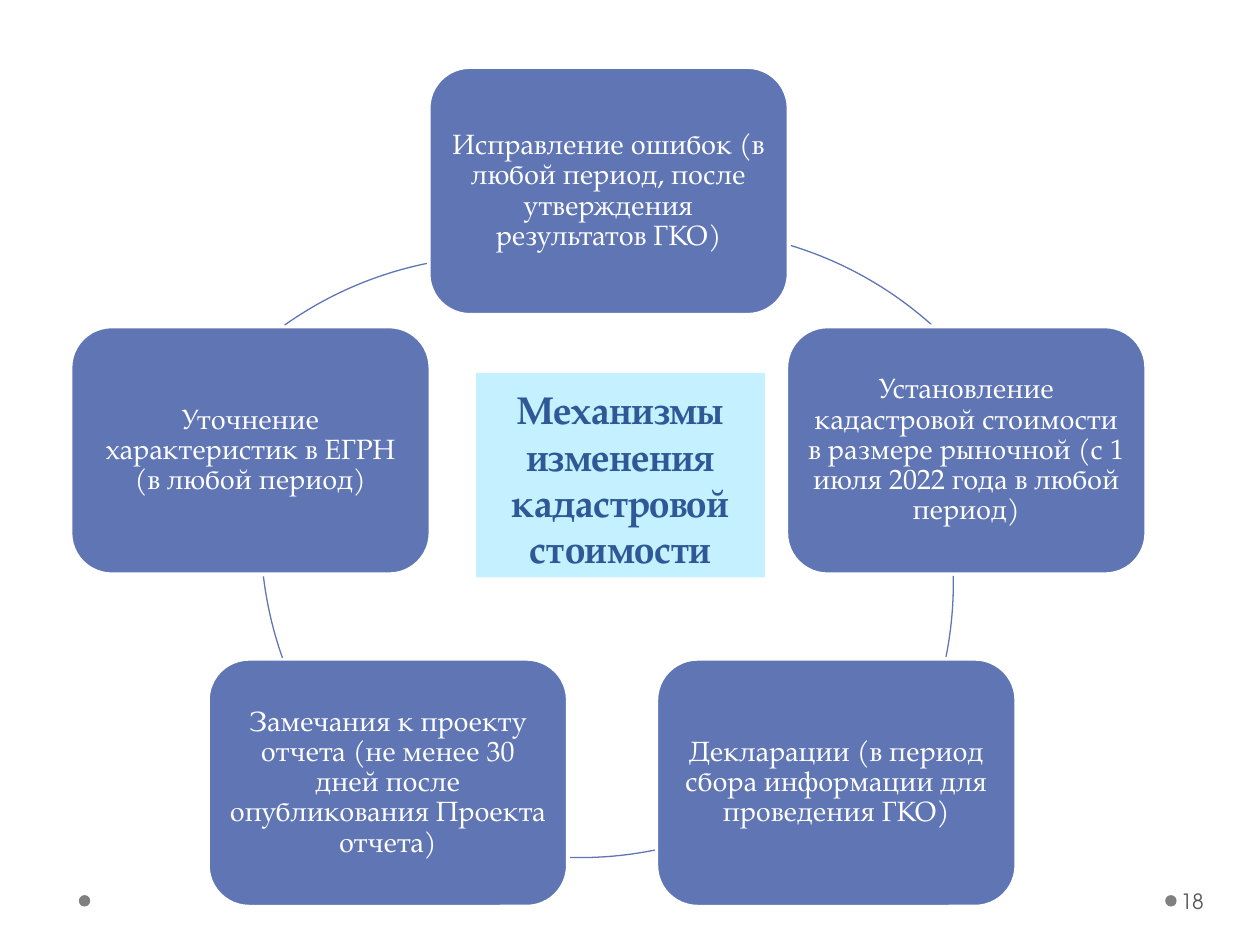
from pptx import Presentation
from pptx.dml.color import RGBColor
from pptx.enum.shapes import MSO_SHAPE as Shp
from pptx.enum.text import MSO_ANCHOR as Anc, PP_ALIGN as Al
from pptx.util import Cm, Pt

SERIF, SANS = "TeX Gyre Pagella", "TeX Gyre Adventor"
BLUE, WHITE, GREY = "6076B4", "FFFFFF", "808080"
CARD_W, CARD_H, RING = 7.26, 5.0, 15.16
CARDS = [
    (8.64, 1.35, "Исправление ошибок (в любой период, после утверждения результатов ГКО)"),
    (15.85, 6.58, "Установление кадастровой стоимости в размере рыночной "
                  "(с 1 июля 2022 года в любой период)"),
    (13.23, 13.28, "Декларации (в период сбора информации для проведения ГКО)"),
    (4.19, 13.28, "Замечания к проекту отчета (не менее 30 дней после "
                  "опубликования Проекта отчета)"),
    (1.42, 6.58, "Уточнение характеристик в ЕГРН (в любой период)"),
]
ARCS = [
    (6.15, 4.62, 287, 311.9),
    (4.06, 4.17, 358.95, 11.4),
    (4.11, 2.13, 78.5, 91.6),
    (5.26, 3.15, 160.5, 173.4),
    (2.54, 5.16, 234.7, 258.5),
]


def rgb(value):
    """Turn a hex string into a colour."""
    return RGBColor.from_string(value)


def set_all(obj, values):
    """Set each attribute named in a dict of format values."""
    for name, value in values.items():
        setattr(obj, name, value)


def add_shape(s, kind, x, y, w, h, fill=None, line=None, width=0.75):
    """Add a preset shape without shadow, sized in centimetres."""
    sp = s.shapes.add_shape(kind, Cm(x), Cm(y), Cm(w), Cm(h))
    sp.shadow.inherit = False
    for fmt, colour in ((sp.fill, fill), (sp.line.fill, line)):
        if colour:
            fmt.solid()
            fmt.fore_color.rgb = rgb(colour)
        else:
            fmt.background()
    if line:
        sp.line.width = Pt(width)
    return sp


def write(sp, text, colour, font, frame, para):
    """Write one formatted paragraph into a shape."""
    tf = sp.text_frame
    set_all(tf, {"word_wrap": True, **frame})
    p = tf.paragraphs[0]
    set_all(p, para)
    r = p.add_run()
    r.text = text
    set_all(r.font, font)
    r.font.color.rgb = rgb(colour)


def add_card(s, x, y, text):
    """Draw one rounded card of the cycle."""
    sp = add_shape(s, Shp.ROUNDED_RECTANGLE, x, y, CARD_W, CARD_H, BLUE, WHITE, 2.25)
    sides = ("left", "top", "right", "bottom")
    frame = {f"margin_{side}": Cm(0.18) for side in sides}
    write(sp, text, WHITE, {"name": SERIF, "size": Pt(16)},
          {"vertical_anchor": Anc.MIDDLE, **frame},
          {"alignment": Al.CENTER, "line_spacing": 0.9})


def add_arc(s, x, y, start, end):
    """Draw a ring segment between two angles in degrees."""
    sp = add_shape(s, Shp.ARC, x, y, RING, RING, line=BLUE)
    for i, angle in enumerate((start, end)):
        sp.adjustments[i] = angle * 0.6


def add_cycle(s, x, y):
    """Draw the cards and the arcs that link them."""
    for (cx, cy, text), (ax, ay, start, end) in zip(CARDS, ARCS):
        add_card(s, x + cx, y + cy, text)
        add_arc(s, x + ax, y + ay, start, end)


def add_title(s, x, y, w, h):
    """Draw the central title panel."""
    sp = add_shape(s, Shp.RECTANGLE, x, y, w, h, "C5F0FF")
    write(sp, "Механизмы изменения кадастровой стоимости", "2F5897",
          {"name": SERIF, "size": Pt(22), "bold": True},
          {"vertical_anchor": Anc.BOTTOM}, {"alignment": Al.CENTER})


def add_footer(s, x, y, w, h):
    """Draw the footer dots and the slide number."""
    dot = 0.23
    num_x = x + w - 1.55
    for left in (num_x - dot, x):
        add_shape(s, Shp.OVAL, left, y + (h - dot) / 2, dot, dot, GREY)
    tb = s.shapes.add_textbox(Cm(num_x), Cm(y), Cm(1.55), Cm(h))
    write(tb, "18", "595959", {"name": SANS, "size": Pt(12)},
          {"vertical_anchor": Anc.MIDDLE, "margin_left": Cm(0.08),
           "margin_right": Cm(0.13)}, {"alignment": Al.LEFT})


def main():
    """Build the slide and save it."""
    prs = Presentation()
    set_all(prs, {"slide_width": Cm(25.4), "slide_height": Cm(19.05)})
    s = prs.slides.add_slide(prs.slide_layouts[6])
    add_footer(s, 1.59, 17.65, 23.68, 1.02)
    add_cycle(s, 0, 0)
    add_title(s, 9.6, 7.52, 5.82, 4.12)
    prs.save("out.pptx")


if __name__ == "__main__":
    main()
